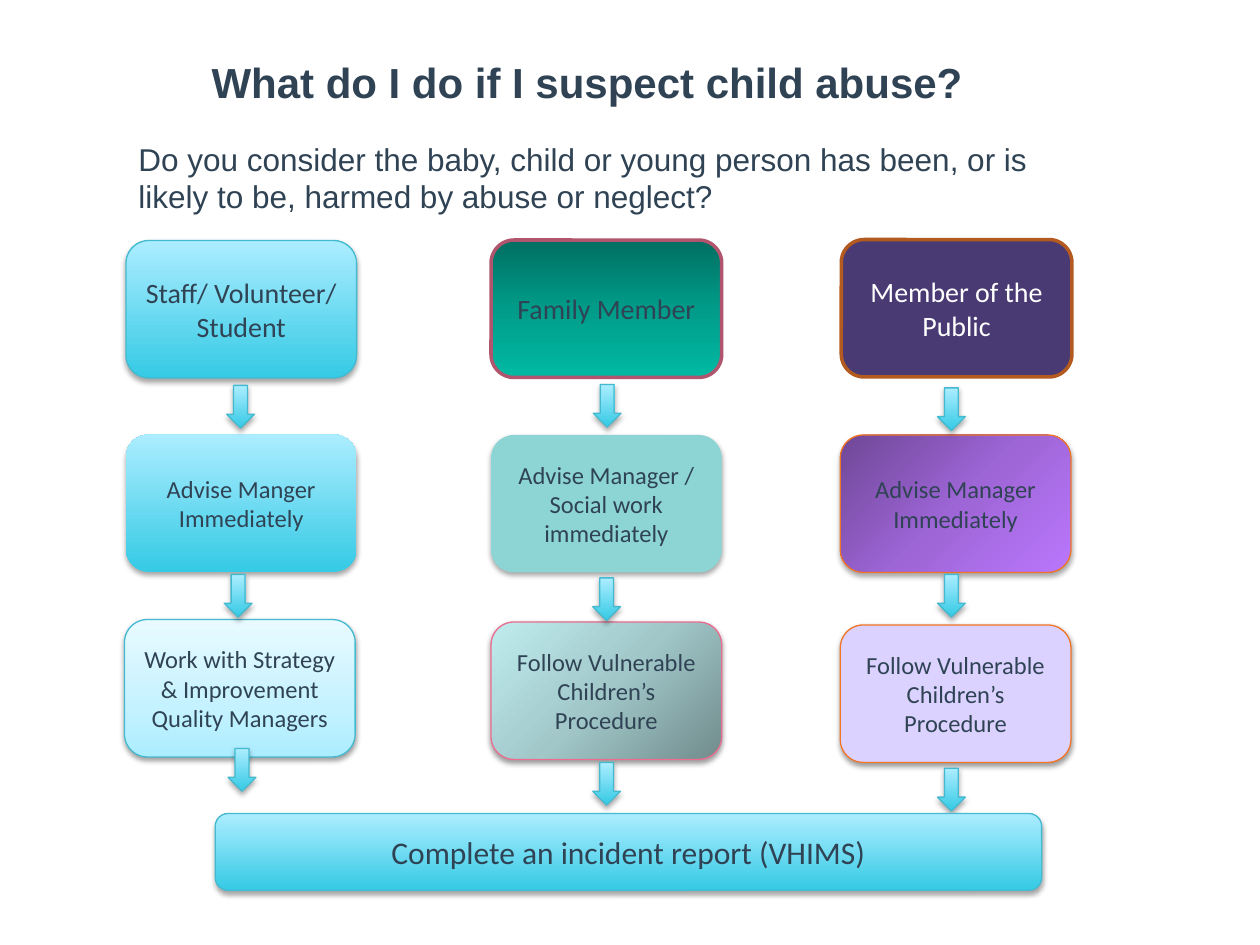
"""Build a flowchart slide on responding to suspected child abuse."""
from dataclasses import dataclass
from typing import Optional, Union

import pptx
import pptx.dml.color
import pptx.enum.shapes
import pptx.enum.text
import pptx.oxml
import pptx.oxml.ns
import pptx.util

Cm = pptx.util.Cm
Pt = pptx.util.Pt
RGBColor = pptx.dml.color.RGBColor
MSO_SHAPE = pptx.enum.shapes.MSO_SHAPE
PP_ALIGN = pptx.enum.text.PP_ALIGN
MSO_ANCHOR = pptx.enum.text.MSO_ANCHOR

INK = RGBColor(0x2F, 0x43, 0x54)
WHITE = RGBColor(0xFF, 0xFF, 0xFF)
CYAN = RGBColor(0x35, 0xCA, 0xE5)
PALE_CYAN = RGBColor(0xAC, 0xED, 0xFF)
SOFT_CYAN = RGBColor(0xC4, 0xF2, 0xFF)
ICE = RGBColor(0xE8, 0xFA, 0xFF)
CYAN_EDGE = RGBColor(0x44, 0xBA, 0xD0)
DEEP_GREEN = RGBColor(0x00, 0x6E, 0x61)
MID_GREEN = RGBColor(0x00, 0x9C, 0x89)
GREEN = RGBColor(0x00, 0xB9, 0xA3)
ROSE = RGBColor(0xB0, 0x55, 0x6D)
PINK = RGBColor(0xEC, 0x6D, 0x8F)
INDIGO = RGBColor(0x4A, 0x3A, 0x73)
BROWN = RGBColor(0xB3, 0x5A, 0x21)
ORANGE = RGBColor(0xF2, 0x75, 0x26)
AQUA = RGBColor(0x8D, 0xD5, 0xD4)
DEEP_PURPLE = RGBColor(0x6E, 0x47, 0x96)
MID_PURPLE = RGBColor(0x9D, 0x65, 0xD5)
PURPLE = RGBColor(0xBA, 0x77, 0xFD)
LILAC = RGBColor(0xDB, 0xD2, 0xFF)
SLATE = RGBColor(0x71, 0x8C, 0x8D)
MID_SLATE = RGBColor(0xA1, 0xC7, 0xC9)
PALE_SLATE = RGBColor(0xBF, 0xEC, 0xEE)

NS = pptx.oxml.ns.nsdecls("a")
BOX_W, BOX_H = 4.65, 2.77
ARROW_W, ARROW_H = 0.56, 0.86


@dataclass
class Gradient:
    stops: tuple
    angle: Optional[int] = None


@dataclass
class Box:
    text: str
    left: float
    top: float
    fill: Union[RGBColor, Gradient]
    line: Optional[RGBColor] = None
    line_width: float = 0.75
    shadow: Optional[int] = 35
    size: int = 14
    color: RGBColor = INK
    width: float = BOX_W
    height: float = BOX_H


CYAN_FILL = Gradient(((0, CYAN), (100, PALE_CYAN)), 270)
ICE_FILL = Gradient(((0, PALE_CYAN), (35, SOFT_CYAN), (100, ICE)), 270)
GREEN_FILL = Gradient(((0, DEEP_GREEN), (50, MID_GREEN), (100, GREEN)), 90)
PURPLE_FILL = Gradient(((0, DEEP_PURPLE), (50, MID_PURPLE), (100, PURPLE)), 45)
SLATE_FILL = Gradient(((0, SLATE), (50, MID_SLATE), (100, PALE_SLATE)))

PROCEDURE = "Follow Vulnerable Children’s Procedure"
BOXES = (
    Box("Staff/ Volunteer/ Student", 2.54, 4.85, CYAN_FILL, CYAN_EDGE, size=16),
    Box("Family Member", 9.9, 4.84, GREEN_FILL, ROSE, 2, None, 16),
    Box("Member of the Public", 16.96, 4.83, INDIGO, BROWN, 2, None, 16, WHITE),
    Box("Advise Manger Immediately", 2.54, 8.76, CYAN_FILL),
    Box("Advise Manager / Social work immediately", 9.9, 8.77, AQUA),
    Box("Advise Manager Immediately", 16.94, 8.77, PURPLE_FILL, ORANGE),
    Box("Work with Strategy & Improvement Quality Managers", 2.51, 12.49,
        ICE_FILL, CYAN_EDGE, shadow=38),
    Box(PROCEDURE, 9.9, 12.54, SLATE_FILL, PINK, shadow=38),
    Box(PROCEDURE, 16.94, 12.6, LILAC, ORANGE, shadow=38),
)
ARROWS = (
    (4.57, 7.77), (4.52, 11.58), (4.6, 15.09),
    (11.96, 7.75), (11.95, 11.65), (11.95, 15.37),
    (18.9, 7.82), (18.9, 11.58), (18.9, 15.49),
)
REPORT = Box("Complete an incident report (VHIMS)", 4.34, 16.4, CYAN_FILL,
             CYAN_EDGE, size=18, width=16.66, height=1.55)


def add_run(tf, text: str, font: str, size: int, color: RGBColor,
            align=PP_ALIGN.LEFT, bold: bool = False) -> None:
    tf.word_wrap = True
    p = tf.paragraphs[0]
    p.alignment = align
    r = p.add_run()
    r.text = text
    r.font.name = font
    r.font.size = Pt(size)
    r.font.bold = bold
    r.font.color.rgb = color


def set_gradient(sp, grad: Gradient) -> None:
    stops = "".join(
        f'<a:gs pos="{pos * 1000}"><a:srgbClr val="{color}"/></a:gs>'
        for pos, color in grad.stops)
    if grad.angle is None:
        shade = ('<a:path path="circle">'
                 '<a:fillToRect l="100000" t="100000"/></a:path>')
    else:
        shade = f'<a:lin ang="{grad.angle * 60000}" scaled="0"/>'
    geom = sp._element.spPr.find(pptx.oxml.ns.qn("a:prstGeom"))
    geom.addnext(pptx.oxml.parse_xml(
        f'<a:gradFill {NS} rotWithShape="1">'
        f'<a:gsLst>{stops}</a:gsLst>{shade}</a:gradFill>'))


def set_shadow(sp, opacity: Optional[int]) -> None:
    sp.shadow.inherit = False
    if opacity is None:
        return
    distance = Pt(1.8 if opacity == 35 else 1.6)
    effects = sp._element.spPr.find(pptx.oxml.ns.qn("a:effectLst"))
    effects.append(pptx.oxml.parse_xml(
        f'<a:outerShdw {NS} blurRad="{Pt(3.1)}" dist="{distance}" '
        f'dir="5400000" rotWithShape="0"><a:srgbClr val="000000">'
        f'<a:alpha val="{opacity * 1000}"/></a:srgbClr></a:outerShdw>'))


def add_box(s, box: Box, kind=MSO_SHAPE.ROUNDED_RECTANGLE) -> None:
    sp = s.shapes.add_shape(kind, Cm(box.left), Cm(box.top),
                            Cm(box.width), Cm(box.height))
    if isinstance(box.fill, Gradient):
        set_gradient(sp, box.fill)
    else:
        sp.fill.solid()
        sp.fill.fore_color.rgb = box.fill
    if box.line is None:
        sp.line.fill.background()
    else:
        sp.line.color.rgb = box.line
        sp.line.width = Pt(box.line_width)
    set_shadow(sp, box.shadow)
    if box.text:
        tf = sp.text_frame
        tf.vertical_anchor = MSO_ANCHOR.MIDDLE
        add_run(tf, box.text, "Calibri", box.size, box.color, PP_ALIGN.CENTER)


def main() -> None:
    prs = pptx.Presentation()
    prs.slide_width, prs.slide_height = Cm(25.4), Cm(19.05)
    s = prs.slides.add_slide(prs.slide_layouts[5])

    title = s.shapes.title
    title.left, title.top = Cm(4.01), Cm(1.02)
    title.width, title.height = Cm(17), Cm(1.28)
    title.text_frame.vertical_anchor = MSO_ANCHOR.TOP
    add_run(title.text_frame, "What do I do if I suspect child abuse?",
            "Arial", 24, INK, bold=True)

    question = s.shapes.add_textbox(Cm(2.54), Cm(2.69), Cm(19.91), Cm(2.57))
    add_run(question.text_frame,
            "Do you consider the baby, child or young person has been, "
            "or is likely to be, harmed by abuse or neglect?",
            "Arial", 18, INK)

    for box in BOXES:
        add_box(s, box)
    for left, top in ARROWS:
        add_box(s, Box("", left, top, CYAN_FILL, CYAN_EDGE,
                       width=ARROW_W, height=ARROW_H), MSO_SHAPE.DOWN_ARROW)
    add_box(s, REPORT)
    prs.save("out.pptx")


if __name__ == "__main__":
    main()
